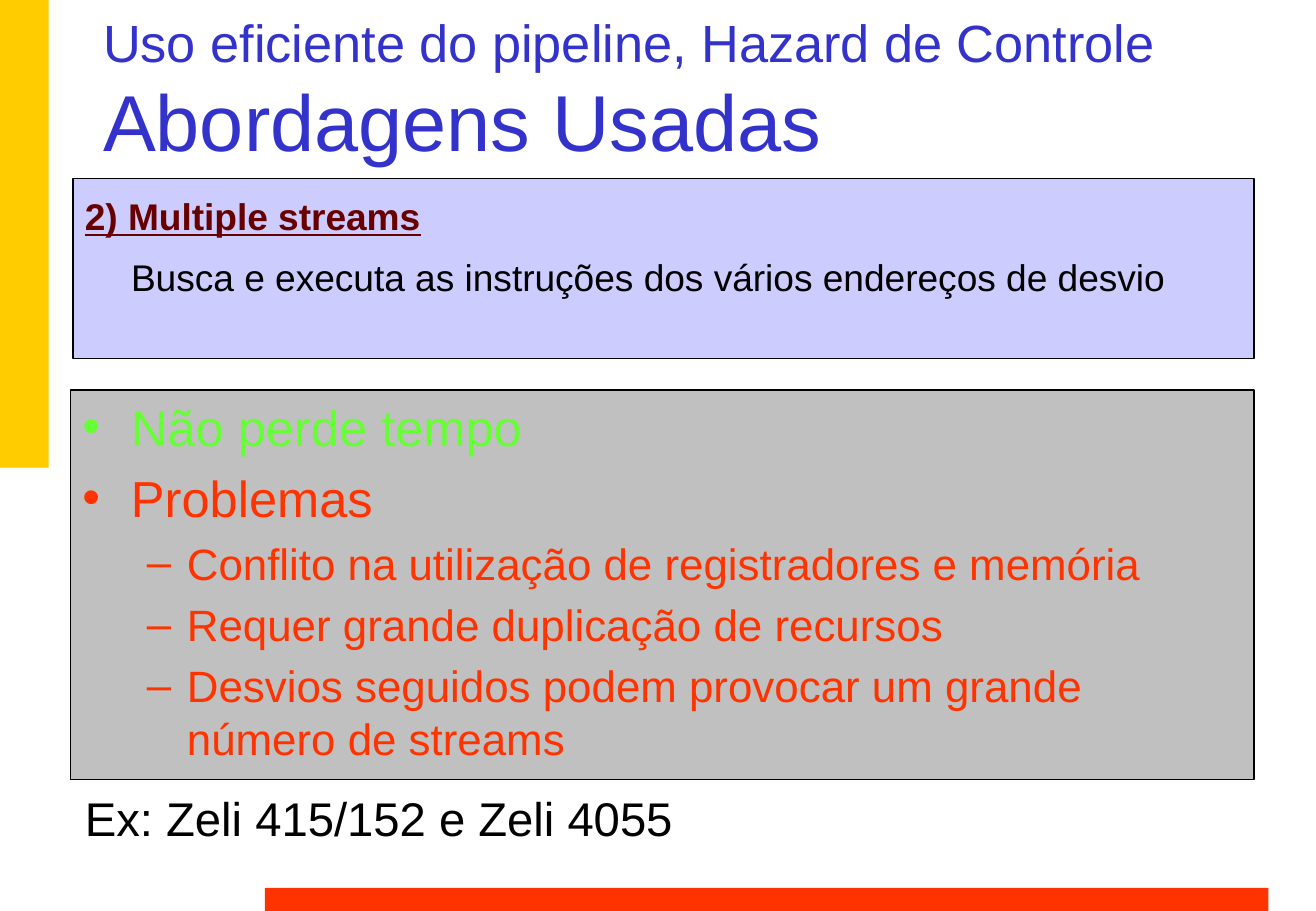
from lxml.etree import SubElement
from pptx import Presentation
from pptx.dml.color import RGBColor
from pptx.enum.shapes import MSO_SHAPE as Shape
from pptx.enum.text import MSO_ANCHOR as Anchor, PP_ALIGN as Align
from pptx.oxml.ns import qn
from pptx.util import Inches, Pt

YELLOW = RGBColor(0xFF, 0xCC, 0x00)
RED = RGBColor(0xFF, 0x33, 0x00)
BLUE = RGBColor(0x33, 0x33, 0xCC)
GREEN = RGBColor(0x66, 0xFF, 0x33)
MAROON = RGBColor(0x69, 0x00, 0x00)
LAVENDER = RGBColor(0xCC, 0xCC, 0xFF)
GRAY = RGBColor(0xC0, 0xC0, 0xC0)
BLACK = RGBColor(0x00, 0x00, 0x00)

SPACE_SHARE = 0.2
TOP_LEVEL = {"bullet": "•", "left": 0.4, "hanging": 0.4}
SUB_LEVEL = {"bullet": "–", "left": 0.86, "hanging": 0.33, "level": 1}


def add_panel(slide, box, fill, outline=None):
    """Draw a flat rectangle in the box and return it."""
    panel = slide.shapes.add_shape(Shape.RECTANGLE, *map(Inches, box))
    panel.shadow.inherit = False
    panel.fill.solid()
    panel.fill.fore_color.rgb = fill
    if outline is None:
        panel.line.fill.background()
    else:
        panel.line.color.rgb = outline
        panel.line.width = Pt(0.75)
    return panel


def set_frame(frame, anchor=Anchor.TOP, wrap=True):
    """Prepare the text frame of a region."""
    for name, value in {"vertical_anchor": anchor, "word_wrap": wrap}.items():
        setattr(frame, name, value)


def write_line(frame, text, size, color, font_format=None, left=0, hanging=0,
               bullet=None, level=0, spacing=0, line_spacing=1.0):
    """Write the next paragraph of a text frame."""
    first = frame.paragraphs[0]
    line = frame.add_paragraph() if first.runs else first
    paragraph_format = {"alignment": Align.LEFT, "level": level,
                        "space_before": Pt(round(size * spacing, 1)),
                        "line_spacing": line_spacing}
    for name, value in paragraph_format.items():
        setattr(line, name, value)
    properties = line._p.get_or_add_pPr()
    properties.set("marL", str(Inches(left)))
    properties.set("indent", str(-Inches(hanging)))
    if bullet:
        SubElement(properties, qn("a:buFont")).set("typeface", "Arial")
        SubElement(properties, qn("a:buChar")).set("char", bullet)
    run = line.add_run()
    run.text = text
    for name, value in {"name": "Arial", "size": Pt(size), **(font_format or {})}.items():
        setattr(run.font, name, value)
    run.font.color.rgb = color


def add_title(slide, box):
    """Place the topic and the heading at the bottom of the box."""
    frame = slide.shapes.add_textbox(*map(Inches, box)).text_frame
    set_frame(frame, Anchor.BOTTOM)
    write_line(frame, "Uso eficiente do pipeline, Hazard de Controle", 31, BLUE)
    write_line(frame, "Abordagens Usadas", 47, BLUE)


def add_approach(slide, box):
    """Place the panel that names and describes the approach."""
    frame = add_panel(slide, box, LAVENDER, BLACK).text_frame
    set_frame(frame)
    rhythm = {"spacing": SPACE_SHARE, "line_spacing": 1.2}
    write_line(frame, "2) Multiple streams", 22, MAROON,
               {"bold": True, "underline": True}, **rhythm)
    write_line(frame, "Busca e executa as instruções dos vários endereços de desvio",
               22, BLACK, left=0.38, **rhythm)


def add_evaluation(slide, box):
    """Place the panel of benefits and problems."""
    frame = add_panel(slide, box, GRAY, BLACK).text_frame
    set_frame(frame)
    points = [
        ("Não perde tempo", 30, GREEN, TOP_LEVEL),
        ("Problemas", 30, RED, TOP_LEVEL),
        ("Conflito na utilização de registradores e memória", 26, RED, SUB_LEVEL),
        ("Requer grande duplicação de recursos", 26, RED, SUB_LEVEL),
        ("Desvios seguidos podem provocar um grande número de streams", 26, RED, SUB_LEVEL),
    ]
    for text, size, color, outline_level in points:
        write_line(frame, text, size, color, spacing=SPACE_SHARE, **outline_level)


def add_example(slide, box):
    """Place the line of example machines."""
    frame = slide.shapes.add_textbox(*map(Inches, box)).text_frame
    set_frame(frame, wrap=False)
    write_line(frame, "Ex: Zeli 415/152 e Zeli 4055", 28, BLACK)


def main():
    """Build the slide and save it."""
    deck = Presentation()
    deck.slide_width, deck.slide_height = Inches(10.83), Inches(7.5)
    slide = deck.slides.add_slide(deck.slide_layouts[6])
    add_panel(slide, (0, 0, 0.4, 3.85), YELLOW)
    add_panel(slide, (2.18, 7.31, 8.26, 0.19), RED)
    add_title(slide, (0.75, 0.16, 9.44, 1.27))
    add_evaluation(slide, (0.58, 3.21, 9.74, 3.21))
    add_example(slide, (0.6, 6.45, 5.18, 0.57))
    add_approach(slide, (0.6, 1.47, 9.72, 1.48))
    deck.save("out.pptx")


if __name__ == "__main__":
    main()
